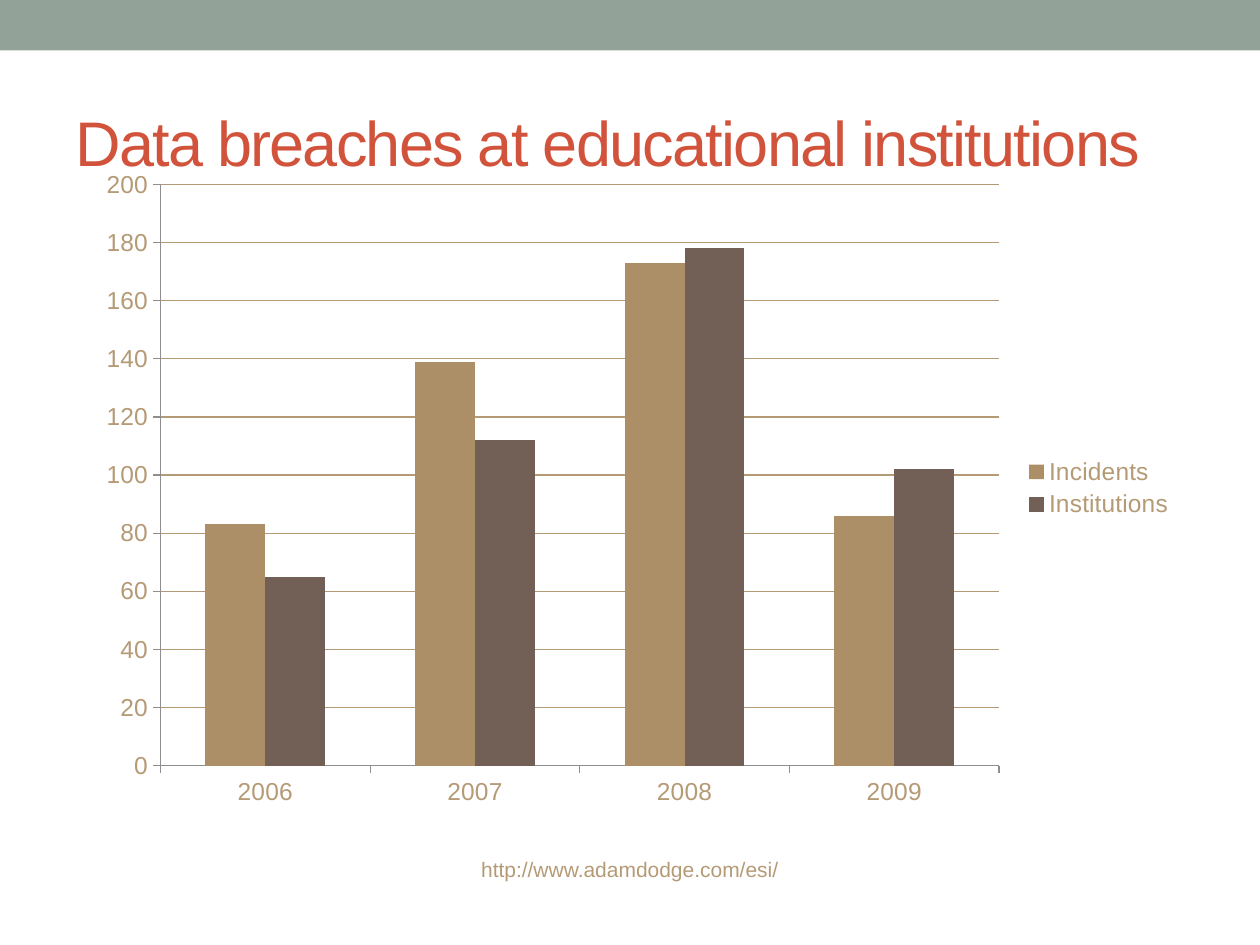
from dataclasses import dataclass

from pptx import Presentation
from pptx.chart.data import CategoryChartData
from pptx.dml.color import RGBColor
from pptx.enum import chart as charts, shapes, text
from pptx.util import Inches, Pt


@dataclass(frozen=True)
class Theme:
    font: str = "Arial"
    band: str = "93A299"
    title: str = "D2533C"
    label: str = "B59A76"
    axis: str = "8E8E8E"
    series: tuple = ("AD8F67", "726056")
    title_size: int = 36
    chart_size: int = 14
    source_size: int = 12


THEME = Theme()
SLIDE_SIZE = (10, 7.5)
BAND_BOX = (0, 0, 10, 0.4)
CHART_BOX = (0.67, 1.25, 8.75, 5.25)
YEARS = ["2006", "2007", "2008", "2009"]
SERIES = {
    "Incidents": [83, 139, 173, 86],
    "Institutions": [65, 112, 178, 102],
}
TITLE = {
    "words": "Data breaches at educational institutions",
    "box": (0.5, 0.58, 9, 1.08),
    "size": THEME.title_size,
    "color": THEME.title,
    "anchor": text.MSO_ANCHOR.MIDDLE,
    "align": text.PP_ALIGN.LEFT,
    "tracking": -100,
}
SOURCE = {
    "words": "http://www.adamdodge.com/esi/",
    "box": (3.5, 6.75, 3, 0.61),
    "size": THEME.source_size,
    "color": THEME.label,
    "anchor": text.MSO_ANCHOR.TOP,
    "align": text.PP_ALIGN.CENTER,
    "tracking": 0,
}


def place(box):
    return [Inches(length) for length in box]


def apply(target, values):
    for name, value in values.items():
        setattr(target, name, value)


def paint(fill, color):
    fill.solid()
    fill.fore_color.rgb = RGBColor.from_string(color)


def style_line(line, color):
    line.color.rgb = RGBColor.from_string(color)
    line.width = Pt(0.75)


def style_font(font, size, color):
    apply(font, {"name": THEME.font, "size": Pt(size), "bold": False})
    font.color.rgb = RGBColor.from_string(color)


def add_band(slide):
    shape = slide.shapes.add_shape(shapes.MSO_SHAPE.RECTANGLE, *place(BAND_BOX))
    shape.shadow.inherit = False
    paint(shape.fill, THEME.band)
    shape.line.fill.background()


def add_text(slide, item):
    frame = slide.shapes.add_textbox(*place(item["box"])).text_frame
    apply(frame, {"word_wrap": True, "vertical_anchor": item["anchor"]})
    paragraph = frame.paragraphs[0]
    paragraph.alignment = item["align"]
    run = paragraph.add_run()
    run.text = item["words"]
    style_font(run.font, item["size"], item["color"])
    if item["tracking"]:
        run._r.get_or_add_rPr().set("spc", str(item["tracking"]))


def add_breach_chart(slide):
    data = CategoryChartData()
    data.categories = YEARS
    for name, values in SERIES.items():
        data.add_series(name, values)
    chart = slide.shapes.add_chart(
        charts.XL_CHART_TYPE.COLUMN_CLUSTERED, *place(CHART_BOX), data
    ).chart
    style_font(chart.font, THEME.chart_size, THEME.label)
    apply(chart, {"has_title": False, "has_legend": True})
    apply(chart.legend, {
        "position": charts.XL_LEGEND_POSITION.RIGHT,
        "include_in_layout": False,
    })
    style_font(chart.legend.font, THEME.chart_size, THEME.label)

    plot = chart.plots[0]
    apply(plot, {"gap_width": 150, "overlap": 0, "vary_by_categories": False})
    for series, color in zip(plot.series, THEME.series):
        paint(series.format.fill, color)

    for axis in (chart.category_axis, chart.value_axis):
        axis.major_tick_mark = charts.XL_TICK_MARK.OUTSIDE
        style_font(axis.tick_labels.font, THEME.chart_size, THEME.label)
        style_line(axis.format.line, THEME.axis)
    apply(chart.value_axis, {
        "minimum_scale": 0,
        "maximum_scale": 200,
        "major_unit": 20,
        "has_major_gridlines": True,
    })
    style_line(chart.value_axis.major_gridlines.format.line, THEME.label)


def main():
    """Build the slide on data breaches at educational institutions."""
    presentation = Presentation()
    width, height = place(SLIDE_SIZE)
    apply(presentation, {"slide_width": width, "slide_height": height})
    slide = presentation.slides.add_slide(presentation.slide_layouts[6])
    add_band(slide)
    add_text(slide, TITLE)
    add_breach_chart(slide)
    add_text(slide, SOURCE)
    presentation.save("out.pptx")


if __name__ == "__main__":
    main()
